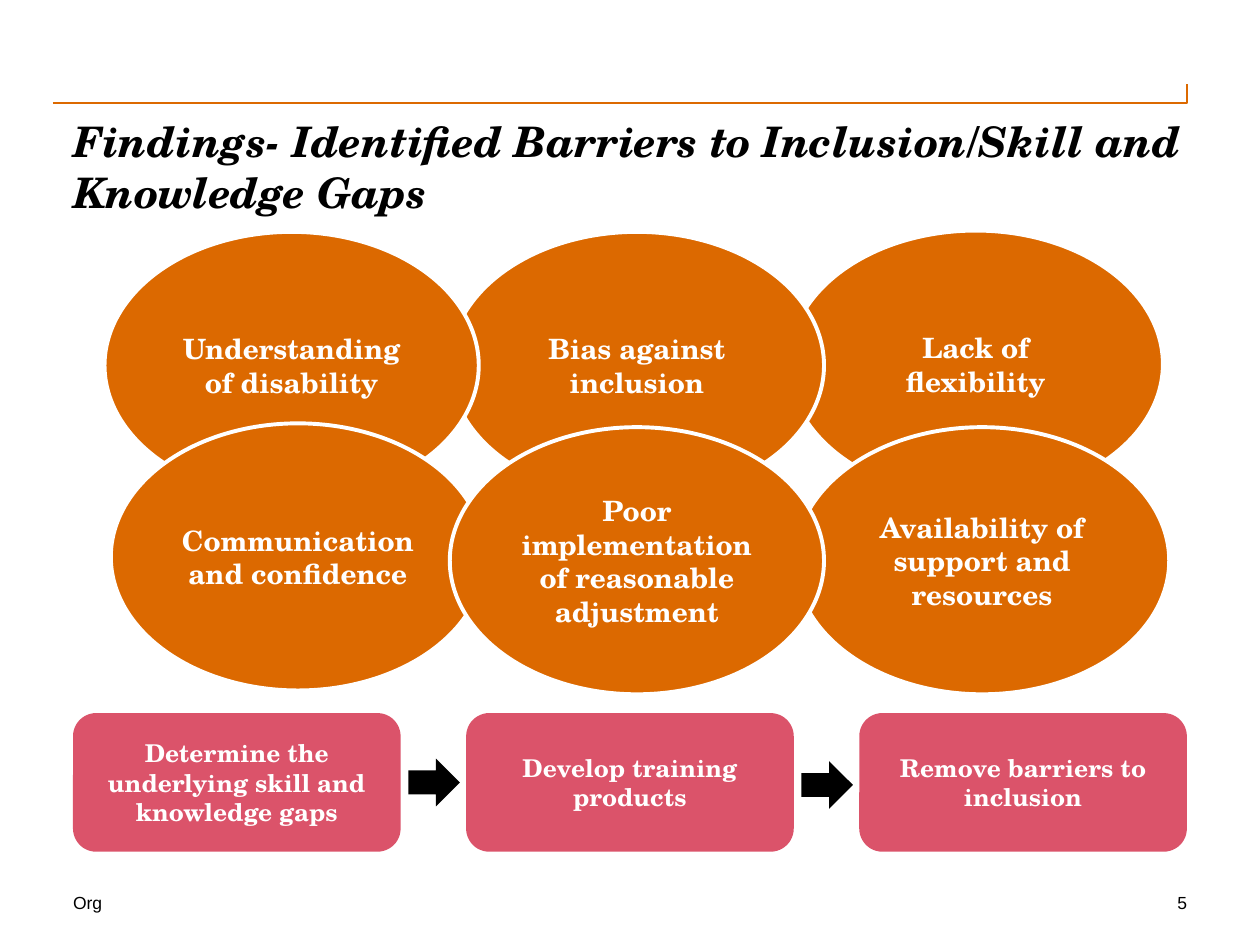
"""Build the slide on barriers to inclusion and the steps that follow."""
from pptx import Presentation
from pptx.dml.color import RGBColor
from pptx.enum.shapes import MSO_SHAPE
from pptx.enum.text import MSO_ANCHOR, PP_ALIGN
from pptx.util import Inches, Pt

OVAL, ROUNDED, ARROW = MSO_SHAPE.OVAL, MSO_SHAPE.ROUNDED_RECTANGLE, MSO_SHAPE.RIGHT_ARROW
LEFT, CENTER, RIGHT = PP_ALIGN.LEFT, PP_ALIGN.CENTER, PP_ALIGN.RIGHT
TOP, MIDDLE = MSO_ANCHOR.TOP, MSO_ANCHOR.MIDDLE
ORANGE = RGBColor(0xDC, 0x69, 0x00)
ROSE = RGBColor(0xDB, 0x53, 0x6A)
BLACK = RGBColor(0x00, 0x00, 0x00)
WHITE = RGBColor(0xFF, 0xFF, 0xFF)
SERIF, SANS = "TeX Gyre Schola", "Arial"

presentation = Presentation()
presentation.slide_width, presentation.slide_height = Inches(10), Inches(7.5)
slide = presentation.slides.add_slide(presentation.slide_layouts[6])


def write(shape, text, size, font=SERIF, color=BLACK, bold=False, italic=False,
          align=LEFT, anchor=TOP, insets=(0, 0)):
    frame = shape.text_frame
    frame.word_wrap = True
    frame.vertical_anchor = anchor
    frame.margin_left = frame.margin_right = Inches(insets[0])
    frame.margin_top = frame.margin_bottom = Inches(insets[1])
    paragraph = frame.paragraphs[0]
    paragraph.alignment = align
    run = paragraph.add_run()
    run.text = text
    run.font.name, run.font.size = font, Pt(size)
    run.font.bold, run.font.italic = bold, italic
    run.font.color.rgb = color


def add_filled(kind, left, top, width, height, color, outline=None):
    shape = slide.shapes.add_shape(kind, Inches(left), Inches(top), Inches(width), Inches(height))
    shape.shadow.inherit = False
    shape.fill.solid()
    shape.fill.fore_color.rgb = color
    if outline is None:
        shape.line.fill.background()
    else:
        shape.line.color.rgb = outline
        shape.line.width = Pt(2.25)
    return shape


builder = slide.shapes.build_freeform(Inches(0.42), Inches(0.82))
builder.add_line_segments([(Inches(9.42), Inches(0.82)), (Inches(9.42), Inches(0.67))], close=False)
header_rule = builder.convert_to_shape()
header_rule.shadow.inherit = False
header_rule.fill.background()
header_rule.line.color.rgb = ORANGE
header_rule.line.width = Pt(1)

title = slide.shapes.add_textbox(Inches(0.58), Inches(0.92), Inches(8.83), Inches(1))
write(title, "Findings- Identified Barriers to Inclusion/Skill and Knowledge Gaps", 24,
      bold=True, italic=True)

footers = [("Org", 0.58, 2.83, LEFT), ("5", 7.75, 1.67, RIGHT)]
for text, left, width, align in footers:
    footer = slide.shapes.add_textbox(Inches(left), Inches(7.08), Inches(width), Inches(0.17))
    write(footer, text, 10, font=SANS, align=align)

steps = ["Determine the underlying skill and knowledge gaps",
         "Develop training products",
         "Remove barriers to inclusion"]
for index, text in enumerate(steps):
    step = add_filled(ROUNDED, 0.58 + 3.12 * index, 5.66, 2.6, 1.1, ROSE)
    write(step, text, 14, color=WHITE, bold=True, align=CENTER, anchor=MIDDLE, insets=(0.1, 0.05))

for left, top in [(3.24, 6.02), (6.36, 6.04)]:
    add_filled(ARROW, left, top, 0.41, 0.38, BLACK)

barriers = [("Lack of flexibility", 6.26, 1.83),
            ("Bias against inclusion", 3.57, 1.84),
            ("Understanding of disability", 0.83, 1.84),
            ("Communication and confidence", 0.88, 3.36),
            ("Availability of support and resources", 6.31, 3.39),
            ("Poor implementation of reasonable adjustment", 3.57, 3.39)]
for text, left, top in barriers:
    barrier = add_filled(OVAL, left, top, 2.97, 2.12, ORANGE, outline=WHITE)
    write(barrier, text, 16, color=WHITE, bold=True, align=CENTER, anchor=MIDDLE, insets=(0.1, 0.05))

presentation.save("out.pptx")
